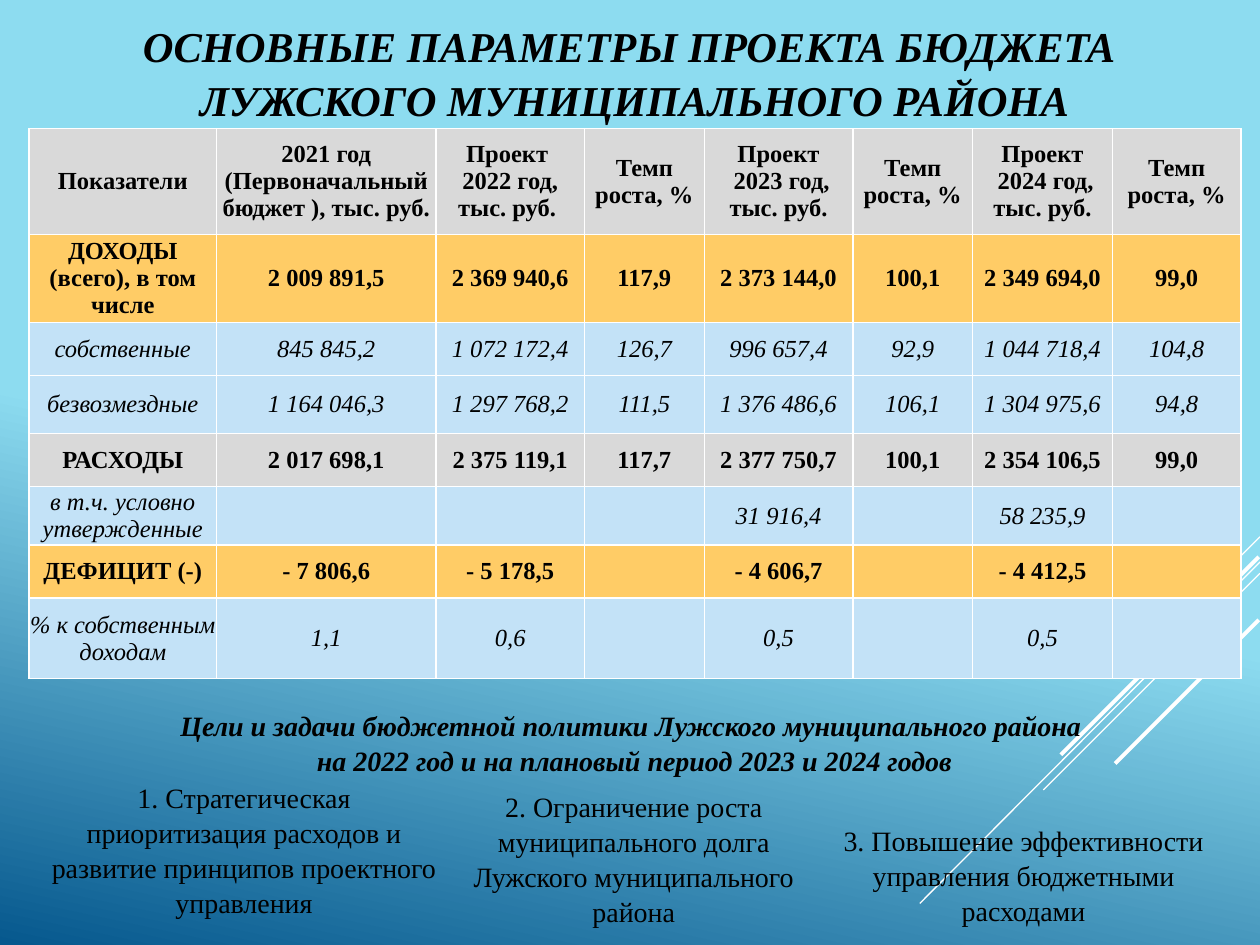
from dataclasses import dataclass

from lxml import etree
from pptx import Presentation
from pptx.dml.color import RGBColor
from pptx.enum.shapes import MSO_CONNECTOR
from pptx.enum.text import MSO_ANCHOR, PP_ALIGN
from pptx.oxml.ns import qn
from pptx.util import Inches, Pt

CENTER = PP_ALIGN.CENTER
MIDDLE, TOP = MSO_ANCHOR.MIDDLE, MSO_ANCHOR.TOP
STRAIGHT = MSO_CONNECTOR.STRAIGHT


@dataclass(frozen=True)
class Theme:
    font: str = "Times New Roman"
    text: str = "000000"
    line: str = "FFFFFF"
    sky: str = "8DDCF0"
    deep: str = "06588E"
    grey: str = "D9D9D9"
    amber: str = "FFCC66"
    blue: str = "C3E2F7"
    title_size: float = 24.3
    body_size: float = 16
    table_size: float = 14
    spacing: float = 1.05


THEME = Theme()

COL_WIDTHS = [1.49, 1.74, 1.18, 0.95, 1.18, 0.95, 1.11, 1.02]
GROWTH = "Темп роста, %"
HEADER = ["Показатели", "2021 год (Первоначальный бюджет ), тыс. руб.",
          "Проект \n2022 год, тыс. руб. ", GROWTH,
          "Проект\n 2023 год, тыс. руб.", GROWTH,
          "Проект\n 2024 год, тыс. руб.", GROWTH]

# Row height, fill, main row (bold) or detail row (italic), cell texts
ROWS = [
    (0.84, THEME.grey, True, HEADER),
    (0.69, THEME.amber, True,
     ["ДОХОДЫ (всего), в том числе", "2 009 891,5", "2 369 940,6", "117,9",
      "2 373 144,0", "100,1", "2 349 694,0", "99,0"]),
    (0.42, THEME.blue, False,
     ["собственные", "845 845,2", "1 072 172,4", "126,7",
      "996 657,4", "92,9", "1 044 718,4", "104,8"]),
    (0.46, THEME.blue, False,
     ["безвозмездные", "1 164 046,3", "1 297 768,2", "111,5",
      "1 376 486,6", "106,1", "1 304 975,6", "94,8"]),
    (0.42, THEME.grey, True,
     ["РАСХОДЫ", "2 017 698,1", "2 375 119,1", "117,7",
      "2 377 750,7", "100,1", "2 354 106,5", "99,0"]),
    (0.46, THEME.blue, False,
     ["в т.ч. условно утвержденные", "", "", "", "31 916,4", "", "58 235,9", ""]),
    (0.42, THEME.amber, True,
     ["ДЕФИЦИТ (-)", "- 7 806,6", "- 5 178,5", "", "- 4 606,7", "", "- 4 412,5", ""]),
    (0.64, THEME.blue, False,
     ["% к собственным доходам", "1,1", "0,6", "", "0,5", "", "0,5", ""]),
]

TITLE = ["ОСНОВНЫЕ ПАРАМЕТРЫ ПРОЕКТА БЮДЖЕТА ", "ЛУЖСКОГО МУНИЦИПАЛЬНОГО РАЙОНА"]
GOALS_HEADING = ["Цели и задачи бюджетной политики Лужского муниципального района ",
                 "на 2022 год и на плановый период 2023 и 2024 годов"]

# Offset from the top of the goals region, text
GOALS = [
    (0, "1. Стратегическая приоритизация расходов и развитие принципов "
        "проектного управления"),
    (0.07, "2. Ограничение роста муниципального долга Лужского "
           "муниципального района"),
    (0.34, "3. Повышение эффективности управления бюджетными расходами"),
]

# Start x, start y, end x, end y, width in points
RAYS = [
    (10, 4.26, 9.17, 5.09, 0.75),
    (10, 4.46, 7.3, 7.17, 0.75),
    (10, 4.55, 8.28, 6.27, 0.75),
    (9.99, 4.42, 8.42, 5.99, 2.25),
    (9.99, 4.92, 8.85, 6.06, 2.25),
]


def rgb(value):
    return RGBColor.from_string(value)


def add_run(p, text, size, bold=False, italic=False):
    r = p.add_run()
    r.text = text
    r.font.name = THEME.font
    r.font.size = Pt(size)
    r.font.bold, r.font.italic = bold, italic
    r.font.color.rgb = rgb(THEME.text)


def add_text(slide, box, lines, size, anchor=TOP, side=0.1, margin=0.05, **style):
    """Centred text box; the lines are joined by line breaks."""
    tf = slide.shapes.add_textbox(*map(Inches, box)).text_frame
    tf.word_wrap = True
    tf.vertical_anchor = anchor
    tf.margin_left = tf.margin_right = Inches(side)
    tf.margin_top = tf.margin_bottom = Inches(margin)
    p = tf.paragraphs[0]
    p.alignment = CENTER
    p.line_spacing = THEME.spacing
    for i, line in enumerate(lines):
        if i:
            p.add_line_break()
        add_run(p, line, size, **style)


def add_background(slide):
    fill = slide.background.fill
    fill.gradient()
    fill.gradient_angle = 258
    stops = ((0.54, THEME.sky), (1, THEME.deep))
    for stop, (position, color) in zip(fill.gradient_stops, stops):
        stop.position = position
        stop.color.rgb = rgb(color)


def add_rays(slide):
    for x1, y1, x2, y2, width in RAYS:
        ray = slide.shapes.add_connector(STRAIGHT, *map(Inches, (x1, y1, x2, y2)))
        ray.line.color.rgb = rgb(THEME.line)
        ray.line.width = Pt(width)
        etree.SubElement(ray._element.spPr, qn("a:effectLst"))


def add_borders(cell):
    tc_pr = cell._tc.get_or_add_tcPr()
    for i, side in enumerate(("a:lnL", "a:lnR", "a:lnT", "a:lnB")):
        ln = etree.Element(qn(side), w=str(Pt(1)))
        solid = etree.SubElement(ln, qn("a:solidFill"))
        etree.SubElement(solid, qn("a:srgbClr"), val=THEME.line)
        tc_pr.insert(i, ln)


def fill_cell(cell, text, color, main):
    cell.fill.solid()
    cell.fill.fore_color.rgb = rgb(color)
    add_borders(cell)
    cell.vertical_anchor = MIDDLE
    cell.margin_left = cell.margin_right = cell.margin_top = cell.margin_bottom = 0
    tf = cell.text_frame
    for i, line in enumerate(text.split("\n")):
        p = tf.add_paragraph() if i else tf.paragraphs[0]
        p.alignment = CENTER
        if line:
            add_run(p, line, THEME.table_size, bold=main, italic=not main)


def add_budget_table(slide, box):
    table = slide.shapes.add_table(len(ROWS), len(COL_WIDTHS), *map(Inches, box)).table
    table.first_row = table.horz_banding = False
    for column, width in zip(table.columns, COL_WIDTHS):
        column.width = Inches(width)
    for row, (height, color, main, texts) in zip(table.rows, ROWS):
        row.height = Inches(height)
        for cell, text in zip(row.cells, texts):
            fill_cell(cell, text, color, main)


def add_goals(slide, box):
    left, top, width, height = box
    step = width / len(GOALS)
    for i, (offset, text) in enumerate(GOALS):
        add_text(slide, (left + i * step, top + offset, step, height - offset),
                 [text], THEME.body_size, side=0, margin=0)


def main():
    prs = Presentation()
    prs.slide_width, prs.slide_height = Inches(10), Inches(7.5)
    slide = prs.slides.add_slide(prs.slide_layouts[6])

    add_background(slide)
    add_rays(slide)
    add_text(slide, (0.23, 0.13, 9.61, 0.87), TITLE, THEME.title_size,
             anchor=MIDDLE, bold=True, italic=True)
    add_budget_table(slide, (0.23, 1.02, 9.61, 4.35))
    add_goals(slide, (0.39, 6.18, 9.28, 1.2))
    add_text(slide, (0.23, 5.56, 9.61, 0.64), GOALS_HEADING, THEME.body_size,
             bold=True, italic=True)

    prs.save("out.pptx")


if __name__ == "__main__":
    main()
